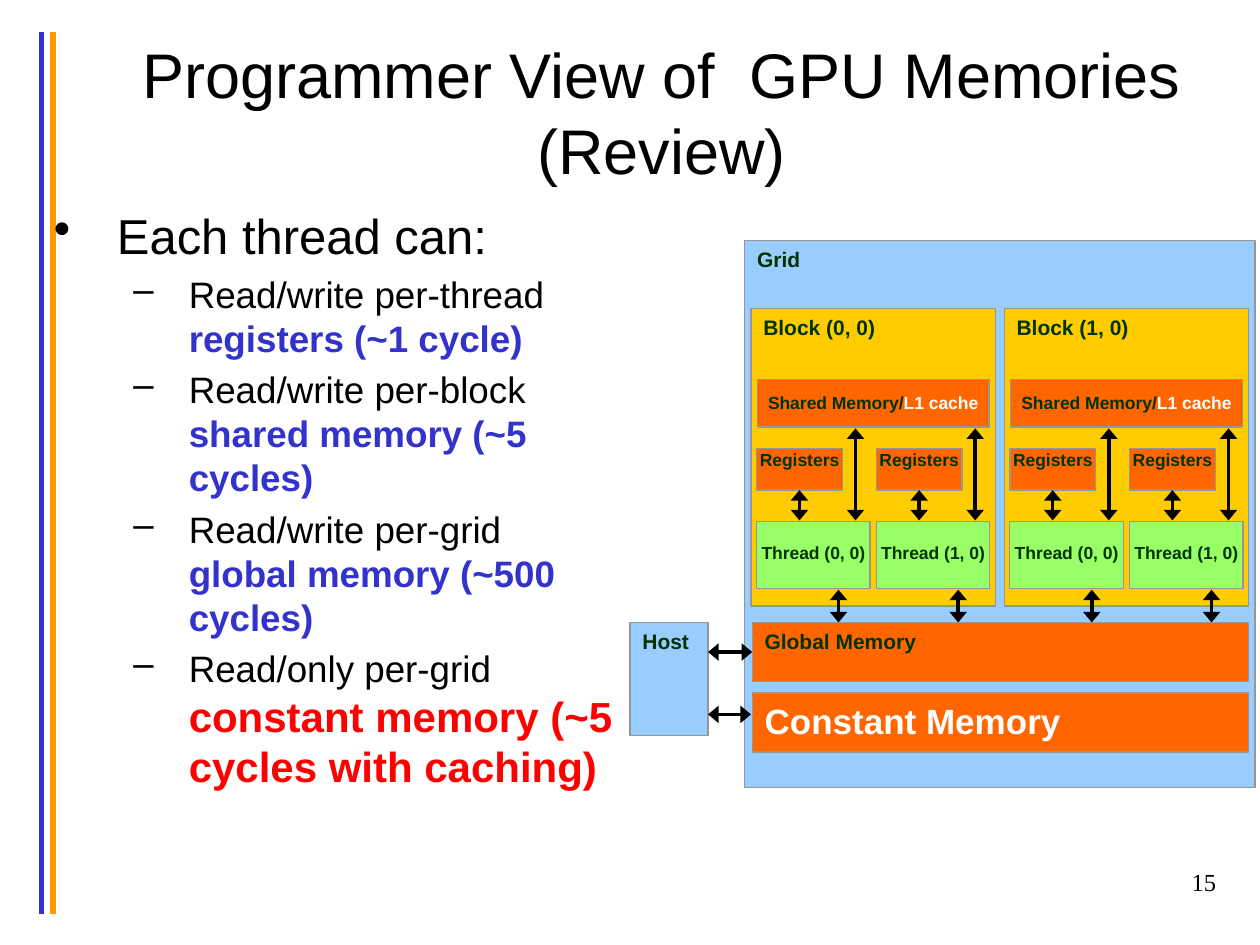
from dataclasses import dataclass
from typing import NamedTuple, Optional

import lxml.etree
import pptx
import pptx.dml.color
import pptx.enum.shapes
import pptx.enum.text
import pptx.oxml.ns
import pptx.util

Pt = pptx.util.Pt
ALIGN = pptx.enum.text.PP_ALIGN
ANCHOR = pptx.enum.text.MSO_ANCHOR
LEFT, BOTTOM = 1, 2  # connection sites of a rectangle

COLORS = {
    "black": "000000", "white": "FFFFFF", "blue": "3333CC", "amber": "FF9900",
    "red": "FF0000", "sky": "99CCFF", "orange": "FF6600", "yellow": "FFCC00",
    "green": "99FF66", "ink": "003300", "edge": "969696",
}

prs = pptx.Presentation()
prs.slide_width, prs.slide_height = pptx.util.Inches(10), pptx.util.Inches(7.5)
COL, ROW = prs.slide_width / 100, prs.slide_height / 75  # grid of 100 x 75
s = prs.slides.add_slide(prs.slide_layouts[6])


class Run(NamedTuple):
    text: str
    size: float
    color: str = "ink"
    bold: bool = True
    font: str = "Arial"


class Area(NamedTuple):
    """Left, top, width and height in grid columns and rows."""
    col: float
    row: float
    cols: float
    rows: float


@dataclass
class Box:
    area: Area
    fill: str
    runs: list[Run]
    centred: bool = False
    inset_rows: float = 0.5


@dataclass
class Bullet:
    char: str
    margin: float
    hanging: float
    before: float
    runs: list[Run]


def rgb(name: str):
    return pptx.dml.color.RGBColor.from_string(COLORS[name])


def place(area: Area) -> list[int]:
    return [round(v * u) for v, u in zip(area, (COL, ROW, COL, ROW))]


def add_runs(p, runs: list[Run]) -> None:
    for run in runs:
        r = p.add_run()
        r.text = run.text
        r.font.name, r.font.size, r.font.bold = run.font, Pt(run.size), run.bold
        r.font.color.rgb = rgb(run.color)


def add_text(area: Area, align=ALIGN.LEFT, anchor=ANCHOR.TOP):
    tf = s.shapes.add_textbox(*place(area)).text_frame
    tf.word_wrap, tf.vertical_anchor = True, anchor
    tf.paragraphs[0].alignment = align
    return tf


def add_box(box: Box):
    sp = s.shapes.add_shape(pptx.enum.shapes.MSO_SHAPE.RECTANGLE, *place(box.area))
    sp.shadow.inherit = False
    sp.fill.solid()
    sp.fill.fore_color.rgb = rgb(box.fill)
    sp.line.color.rgb, sp.line.width = rgb("edge"), Pt(0.75)
    tf = sp.text_frame
    tf.word_wrap, tf.vertical_anchor = True, ANCHOR.TOP
    tf.margin_top = round(box.inset_rows * ROW)
    if box.centred:
        tf.margin_left = tf.margin_right = tf.margin_bottom = 0
    p = tf.paragraphs[0]
    p.alignment = ALIGN.CENTER if box.centred else ALIGN.LEFT
    add_runs(p, box.runs)
    return sp


def add_line(x1: float, y1: float, x2: float, y2: float, color: str, width: float):
    cx = s.shapes.add_connector(
        pptx.enum.shapes.MSO_CONNECTOR.STRAIGHT,
        round(x1 * COL), round(y1 * ROW), round(x2 * COL), round(y2 * ROW))
    cx.line.color.rgb, cx.line.width = rgb(color), Pt(width)
    lxml.etree.SubElement(cx.element.spPr, pptx.oxml.ns.qn("a:effectLst"))
    return cx


def add_arrow(x1: float, y1: float, x2: float, y2: float,
              begin: Optional[tuple] = None, end: Optional[tuple] = None) -> None:
    """Double-headed arrow; begin and end are (shape, side) joins."""
    cx = add_line(x1, y1, x2, y2, "black", 2)
    ln = cx.element.spPr.find(pptx.oxml.ns.qn("a:ln"))
    for tag in ("a:headEnd", "a:tailEnd"):
        lxml.etree.SubElement(ln, pptx.oxml.ns.qn(tag), type="triangle", w="lg", len="med")
    if begin:
        cx.begin_connect(*begin)
    if end:
        cx.end_connect(*end)


def add_bullet(p, item: Bullet) -> None:
    pPr = p._p.get_or_add_pPr()
    pPr.set("marL", str(round(item.margin * COL)))
    pPr.set("indent", str(round(-item.hanging * COL)))
    p.space_before = Pt(item.before)
    lxml.etree.SubElement(pPr, pptx.oxml.ns.qn("a:buChar"), char=item.char)
    add_runs(p, item.runs)


def add_thread(col: float, index: int) -> None:
    """One thread with its registers and its three memory arrows."""
    registers = add_box(Box(Area(col, 35.6, 6.8, 3.3), "orange",
                            [Run("Registers", 10)], True, 0))
    add_box(Box(Area(col, 41.4, 9, 5.3), "green",
                [Run(f"Thread ({index}, 0)", 10)], True, 1.6))
    add_arrow(col + 7.85, 41.3, col + 7.85, 34)
    add_arrow(col + 3.4, 38.9, col + 3.4, 41.3, begin=(registers, BOTTOM))
    add_arrow(col + 6.5, 46.8, col + 6.5, 49.4)


def add_block(col: float, index: int) -> None:
    add_box(Box(Area(col, 24.5, 19.4, 23.6), "yellow", [Run(f"Block ({index}, 0)", 12)]))
    add_box(Box(Area(col + 0.5, 30.1, 18.4, 3.8), "orange",
                [Run("Shared Memory/", 10), Run("L1 cache", 10, "white")], True, 1))
    for i in range(2):
        add_thread(col + 0.45 + i * 9.5, i)


for x, color in ((3.3, "blue"), (4.2, "amber")):
    add_line(x, 2.5, x, 72.5, color, 3)

number = add_text(Area(76.7, 68.3, 20.8, 5), ALIGN.RIGHT)
add_runs(number.paragraphs[0], [Run("15", 14, "black", False, "Times New Roman")])

title = add_text(Area(5, 3, 95, 11.7), ALIGN.CENTER, ANCHOR.MIDDLE).paragraphs[0]
add_runs(title, [Run("Programmer View of  GPU Memories", 36, "black", False)])
title.add_line_break()
add_runs(title, [Run("(Review)", 36, "black", False)])

ACCESS = [
    ("Read/write per-thread ", Run("registers (~1 cycle)", 21, "blue")),
    ("Read/write per-block ", Run("shared memory (~5 cycles)", 21, "blue")),
    ("Read/write per-grid ", Run("global memory (~500 cycles)", 21, "blue")),
    ("Read/only per-grid ", Run("constant memory (~5 cycles with caching)", 24, "red")),
]
body = add_text(Area(3.3, 15.8, 46.7, 30))
add_bullet(body.paragraphs[0],
           Bullet("•", 5, 5, 5.6, [Run("Each thread can:", 28, "black", False)]))
for lead, memory in ACCESS:
    p = body.add_paragraph()
    p.level = 1
    add_bullet(p, Bullet("–", 10.7, 4.4, 4.2, [Run(lead, 21, "black", False), memory]))

add_box(Box(Area(59.1, 19.1, 40.5, 43.4), "sky", [Run("Grid", 12)]))
global_memory = add_box(Box(Area(59.7, 49.4, 39.4, 4.7), "orange", [Run("Global Memory", 12)]))
for i in range(2):
    add_block(59.6 + i * 20.1, i)
add_box(Box(Area(50, 49.4, 6.2, 9), "sky", [Run("Host", 12)]))
add_box(Box(Area(59.7, 55, 39.4, 4.7), "orange", [Run("Constant Memory", 20, "white")]))
add_arrow(56.2, 51.75, 59.7, 51.75, end=(global_memory, LEFT))
add_arrow(56.2, 56.7, 59.6, 56.7)

prs.save("out.pptx")
